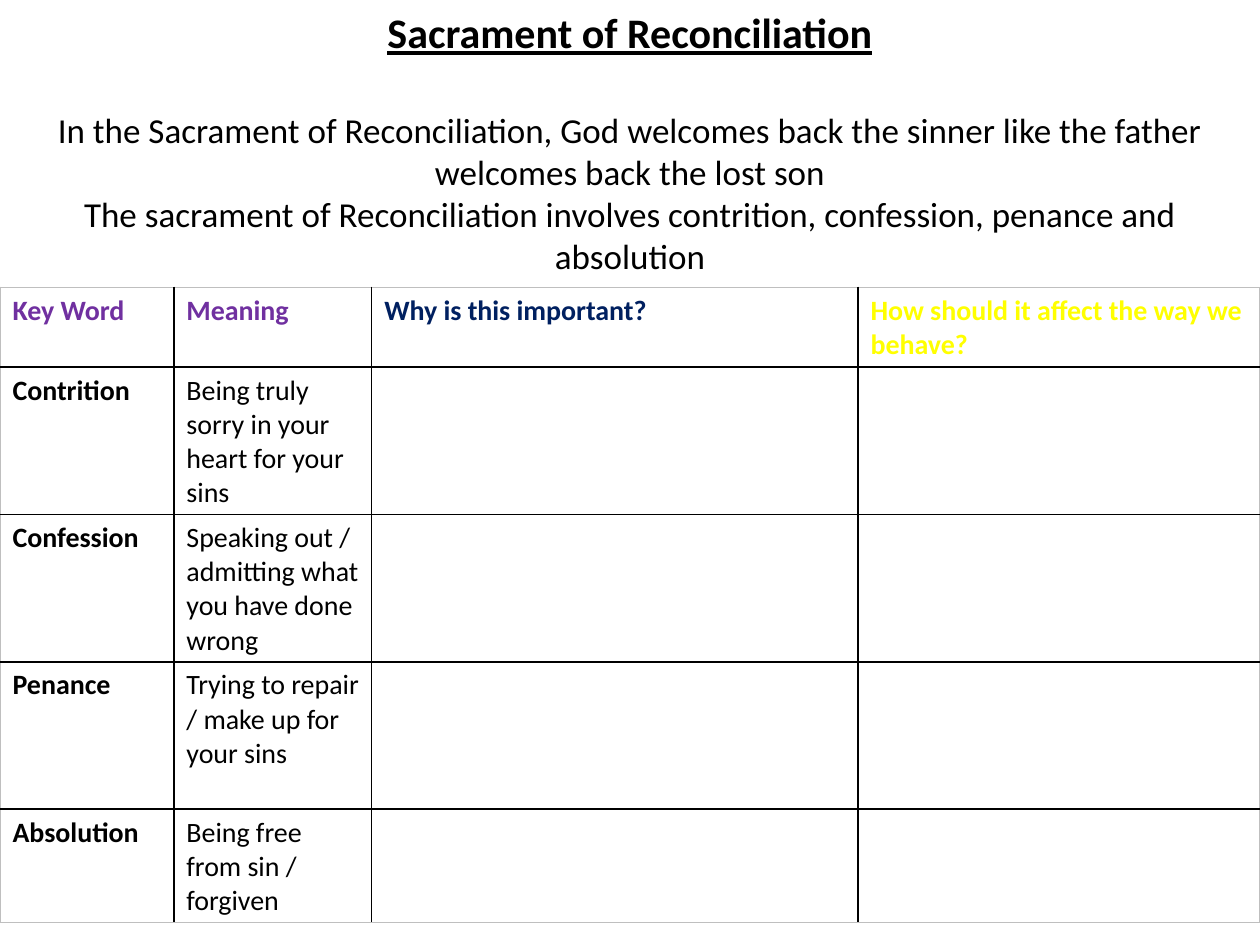
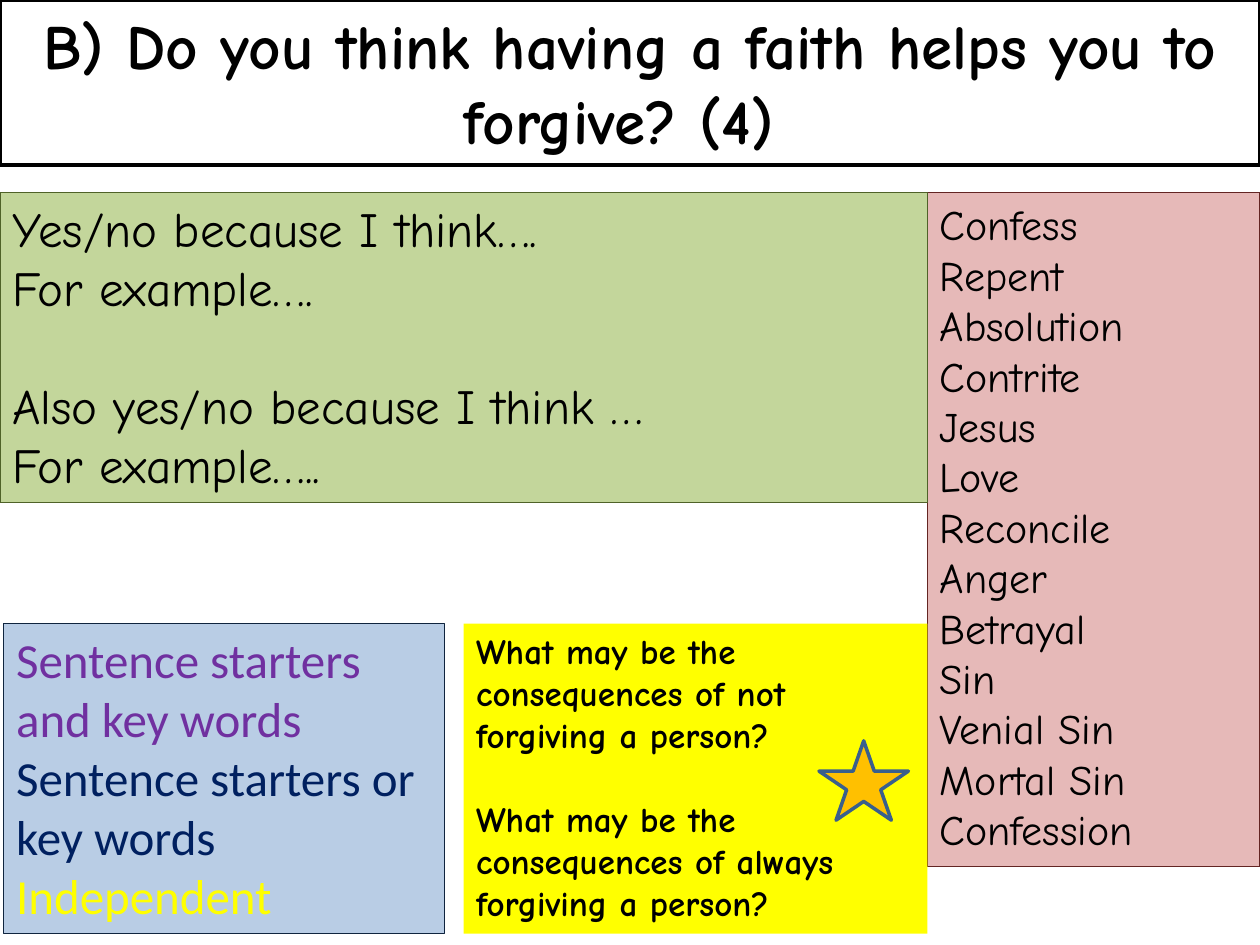
from dataclasses import dataclass

from lxml import etree
from pptx import Presentation
from pptx.dml.color import RGBColor
from pptx.enum.shapes import MSO_SHAPE
from pptx.enum.text import MSO_ANCHOR, PP_ALIGN
from pptx.oxml.ns import qn
from pptx.util import Inches, Pt

RECT, STAR = MSO_SHAPE.RECTANGLE, MSO_SHAPE.STAR_5_POINT
TOP = MSO_ANCHOR.TOP
LEFT, CENTER = PP_ALIGN.LEFT, PP_ALIGN.CENTER
TITLE_ONLY = 5

SANS, HAND = "Calibri", "Comic Neue"
COLORS = {
    "black": "000000", "white": "FFFFFF", "grey": "BFBFBF",
    "purple": "7030A0", "navy": "002060", "yellow": "FFFF00",
    "pink": "E6B9B8", "maroon": "632523",
    "green": "C3D69B", "olive": "4F6228",
    "blue": "B9CDE5", "midnight": "0F243E",
    "gold": "FFC000", "steel": "3A5F8C",
}


@dataclass
class Para:
    text: str
    color: str = "black"
    before: float = 0
    outlined: bool = False


@dataclass
class Panel:
    box: tuple[float, float, float, float]
    paras: list[Para]
    size: float
    fill: str
    line: str | None = None
    font: str = HAND
    bold: bool = False


HEADERS = [
    Para("Key Word", "purple"),
    Para("Meaning", "purple"),
    Para("Why is this important?", "navy"),
    Para("How should it affect the way we behave?", "yellow", outlined=True),
]
MEANINGS = {
    "Contrition": "Being truly sorry in your heart for your sins",
    "Confession": "Speaking out / admitting what you have done wrong",
    "Penance": "Trying to repair / make up for your sins",
    "Absolution": "Being free from sin / forgiven",
}
COL_WIDTHS = [1.38, 1.57, 3.86, 3.19]
ROW_HEIGHTS = [0.63, 1.17, 1.17, 1.17, 0.9]

KEY_WORDS = ["Confess", "Repent", "Absolution", "Contrite", "Jesus", "Love",
             "Reconcile", "Anger", "Betrayal", "Sin", "Venial Sin",
             "Mortal Sin", "Confession"]
PANELS = [
    Panel((7.36, 1.53, 2.64, 5.35), [Para(word) for word in KEY_WORDS],
          24, "pink", "maroon"),
    Panel((0, 1.53, 7.36, 2.46), [
        Para("Yes/no because I think…."),
        Para("For example…."),
        Para("Also yes/no because I think …", before=33.7),
        Para("For example….."),
    ], 28, "green", "olive"),
    Panel((0.03, 4.95, 3.5, 2.46), [
        Para("Sentence starters and key words", "purple"),
        Para("Sentence starters or key words", "navy"),
        Para("Independent", "yellow", outlined=True),
    ], 28, "blue", "midnight", SANS),
    Panel((3.68, 4.95, 3.68, 2.46), [
        Para("What may be the consequences of not forgiving a person?"),
        Para("What may be the consequences of always forgiving a person?",
             before=24),
    ], 20, "yellow", bold=True),
]


def rgb(name: str) -> RGBColor:
    return RGBColor.from_string(COLORS[name])


def add_line(parent, tag: str, color: str, width: float, index: int) -> None:
    """Insert a solid DrawingML line element into parent at index."""
    ln = etree.Element(qn(tag), w=str(Pt(width)))
    fill = etree.SubElement(ln, qn("a:solidFill"))
    etree.SubElement(fill, qn("a:srgbClr"), val=COLORS[color])
    parent.insert(index, ln)


def write(tf, paras: list[Para], *, size: float, font: str = SANS,
          bold: bool = False, underline: bool = False, align=LEFT) -> None:
    tf.word_wrap = True
    for i, para in enumerate(paras):
        p = tf.paragraphs[0] if i == 0 else tf.add_paragraph()
        p.alignment = align
        if para.before:
            p.space_before = Pt(para.before)
        r = p.add_run()
        r.text = para.text
        r.font.name, r.font.size = font, Pt(size)
        r.font.bold, r.font.underline = bold, underline
        r.font.color.rgb = rgb(para.color)
        if para.outlined:
            add_line(r.font._element, "a:ln", "black", 0.75, 0)


def paint(sp, fill: str, line: str | None, width: float = 0.75) -> None:
    sp.fill.solid()
    sp.fill.fore_color.rgb = rgb(fill)
    if line:
        sp.line.color.rgb = rgb(line)
        sp.line.width = Pt(width)
    else:
        sp.line.fill.background()


def add_titled_slide(prs, text: str, height: float, **style):
    slide = prs.slides.add_slide(prs.slide_layouts[TITLE_ONLY])
    title = slide.shapes.title
    title.left, title.top = Inches(0), Inches(0)
    title.width, title.height = prs.slide_width, Inches(height)
    title.text_frame.vertical_anchor = TOP
    write(title.text_frame, [Para(text)], bold=True, align=CENTER, **style)
    return slide


def add_shape(slide, kind, box: tuple, fill: str, line: str | None,
              width: float = 0.75):
    sp = slide.shapes.add_shape(kind, *map(Inches, box))
    sp.shadow.inherit = False
    paint(sp, fill, line, width)
    return sp


def add_panel(slide, panel: Panel) -> None:
    sp = add_shape(slide, RECT, panel.box, panel.fill, panel.line)
    sp.text_frame.vertical_anchor = TOP
    write(sp.text_frame, panel.paras, size=panel.size, font=panel.font,
          bold=panel.bold)


def add_key_word_table(slide) -> None:
    rows, cols = len(ROW_HEIGHTS), len(COL_WIDTHS)
    frame = slide.shapes.add_table(
        rows, cols, Inches(0), Inches(2.28),
        Inches(sum(COL_WIDTHS)), Inches(sum(ROW_HEIGHTS)))
    table = frame.table
    table.first_row = table.horz_banding = False
    for column, width in zip(table.columns, COL_WIDTHS):
        column.width = Inches(width)
    for row, height in zip(table.rows, ROW_HEIGHTS):
        row.height = Inches(height)

    for col, header in enumerate(HEADERS):
        write(table.cell(0, col).text_frame, [header], size=16, bold=True)
    for row, (word, meaning) in enumerate(MEANINGS.items(), start=1):
        write(table.cell(row, 0).text_frame, [Para(word)], size=16, bold=True)
        write(table.cell(row, 1).text_frame, [Para(meaning)], size=16)

    for row in range(rows):
        for col in range(cols):
            cell = table.cell(row, col)
            cell.fill.background()
            outer = {"a:lnL": col == 0, "a:lnR": col == cols - 1,
                     "a:lnT": row == 0, "a:lnB": row == rows - 1}
            for i, (tag, is_outer) in enumerate(outer.items()):
                add_line(cell._tc.get_or_add_tcPr(), tag,
                         "grey" if is_outer else "black", 1, i)


def build_reconciliation(prs) -> None:
    slide = add_titled_slide(prs, "Sacrament of Reconciliation", 0.5,
                             size=24, underline=True)
    intro = slide.shapes.add_textbox(
        Inches(0), Inches(0.81), prs.slide_width, Inches(1.45))
    write(intro.text_frame, [
        Para("In the Sacrament of Reconciliation, God welcomes back the "
             "sinner like the father welcomes back the lost son"),
        Para("The sacrament of Reconciliation involves contrition, "
             "confession, penance and absolution"),
    ], size=20, align=CENTER)
    add_key_word_table(slide)


def build_forgiveness_question(prs) -> None:
    slide = add_titled_slide(
        prs, "B) Do you think having a faith helps you to forgive? (4) ",
        1.31, size=36, font=HAND)
    paint(slide.shapes.title, "white", "black", 2)
    for panel in PANELS:
        add_panel(slide, panel)
    add_shape(slide, STAR, (6.5, 5.88, 0.71, 0.63), "gold", "steel", 2)


def main() -> None:
    prs = Presentation()
    prs.slide_width, prs.slide_height = Inches(10), Inches(7.5)
    build_reconciliation(prs)
    build_forgiveness_question(prs)
    prs.save("out.pptx")


if __name__ == "__main__":
    main()
